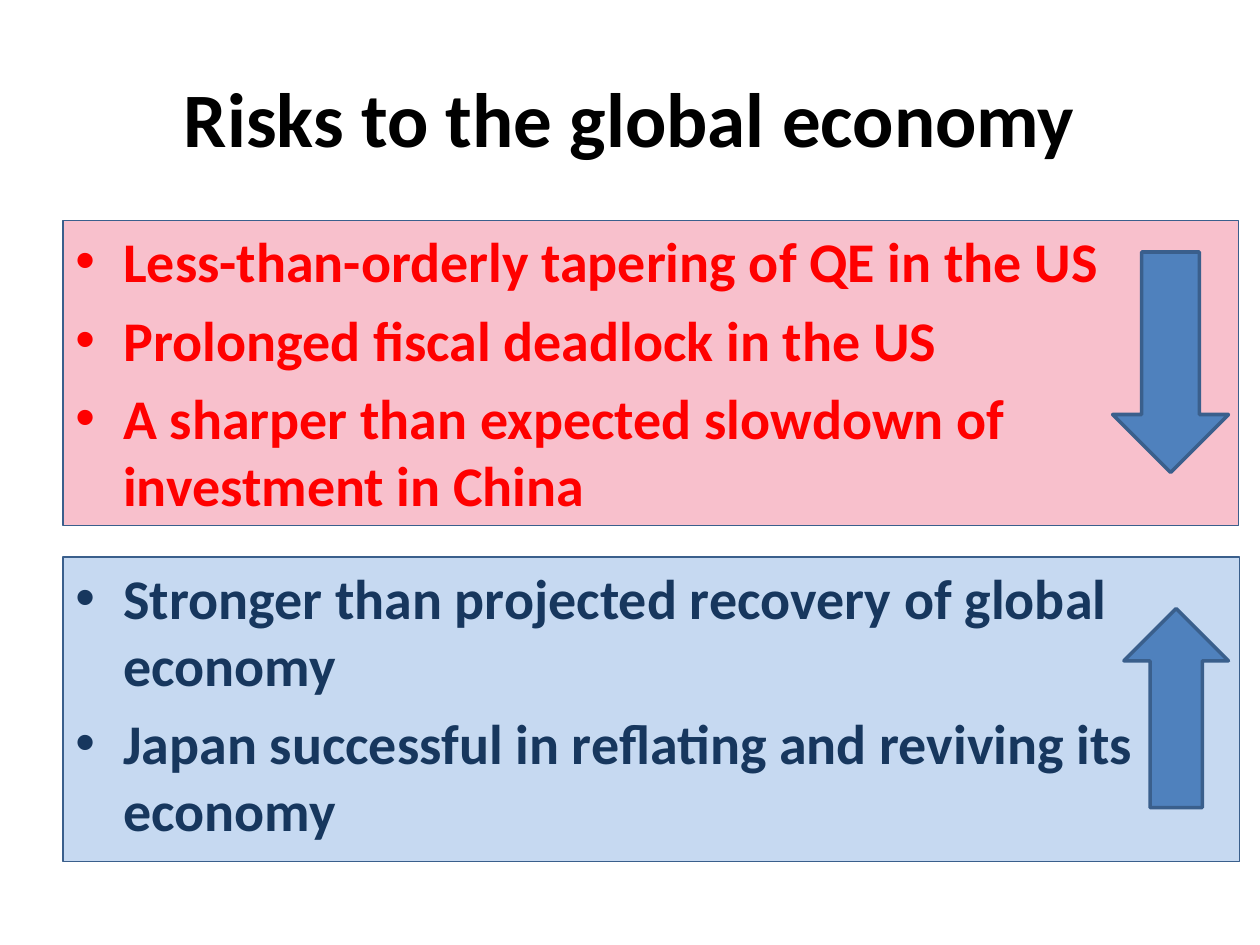
from lxml import etree
from pptx import Presentation
from pptx.dml.color import RGBColor
from pptx.enum.shapes import MSO_SHAPE
from pptx.enum.text import MSO_ANCHOR, PP_ALIGN
from pptx.oxml.ns import qn
from pptx.util import Inches, Pt

COLORS = {
    "title": "000000", "outline": "3A5F8C", "arrow": "4F81BD",
    "downside fill": "F8C0CC", "downside text": "FF0000",
    "upside fill": "C6D9F1", "upside text": "17375E",
}
FONT = "Calibri"
TITLE = "Risks to the global economy"

# (risk, box position and size, bullets)
RISKS = [
    ("downside", (0.5, 1.75, 9.33, 2.42), [
        "Less-than-orderly tapering of QE in the US",
        "Prolonged fiscal deadlock in the US",
        "A sharper than expected slowdown of investment in China",
    ]),
    ("upside", (0.5, 4.42, 9.34, 2.42), [
        "Stronger than projected recovery of global economy",
        "Japan successful in reflating and reviving its economy",
    ]),
]
ARROWS = [
    (MSO_SHAPE.UP_ARROW, (8.92, 4.83, 0.83, 1.58)),
    (MSO_SHAPE.DOWN_ARROW, (8.83, 2, 0.92, 1.75)),
]


def color(name):
    return RGBColor.from_string(COLORS[name])


def add_shape(slide, kind, place, fill, line_width):
    shape = slide.shapes.add_shape(kind, *map(Inches, place))
    shape.shadow.inherit = False
    shape.fill.solid()
    shape.fill.fore_color.rgb = color(fill)
    shape.line.color.rgb = color("outline")
    shape.line.width = Pt(line_width)
    return shape


def add_run(paragraph, text, size, ink):
    run = paragraph.add_run()
    run.text = text
    run.font.name = FONT
    run.font.size = Pt(size)
    run.font.bold = True
    run.font.color.rgb = color(ink)


def make_bullet(paragraph):
    properties = paragraph._p.get_or_add_pPr()
    properties.set("marL", str(Inches(0.38)))
    properties.set("indent", str(Inches(-0.38)))
    etree.SubElement(properties, qn("a:buFont")).set("typeface", "Arial")
    etree.SubElement(properties, qn("a:buChar")).set("char", "•")


prs = Presentation()
prs.slide_width, prs.slide_height = Inches(10), Inches(7.5)
slide = prs.slides.add_slide(prs.slide_layouts[5])

# Title
title = slide.shapes.title
title.left, title.top, title.width, title.height = map(Inches, (0.5, 0.3, 9, 1.25))
title.text_frame.vertical_anchor = MSO_ANCHOR.MIDDLE
heading = title.text_frame.paragraphs[0]
heading.alignment = PP_ALIGN.CENTER
add_run(heading, TITLE, 44, "title")

# Risk boxes
for risk, place, bullets in RISKS:
    box = add_shape(slide, MSO_SHAPE.RECTANGLE, place, f"{risk} fill", 0.75)
    frame = box.text_frame
    frame.word_wrap = True
    frame.vertical_anchor = MSO_ANCHOR.TOP
    for i, bullet in enumerate(bullets):
        paragraph = frame.add_paragraph() if i else frame.paragraphs[0]
        make_bullet(paragraph)
        paragraph.alignment = PP_ALIGN.LEFT
        if i:
            paragraph.space_before = Pt(6.4)
        add_run(paragraph, bullet, 32, f"{risk} text")

# Direction arrows
for kind, place in ARROWS:
    add_shape(slide, kind, place, "arrow", 2)

prs.save("out.pptx")
